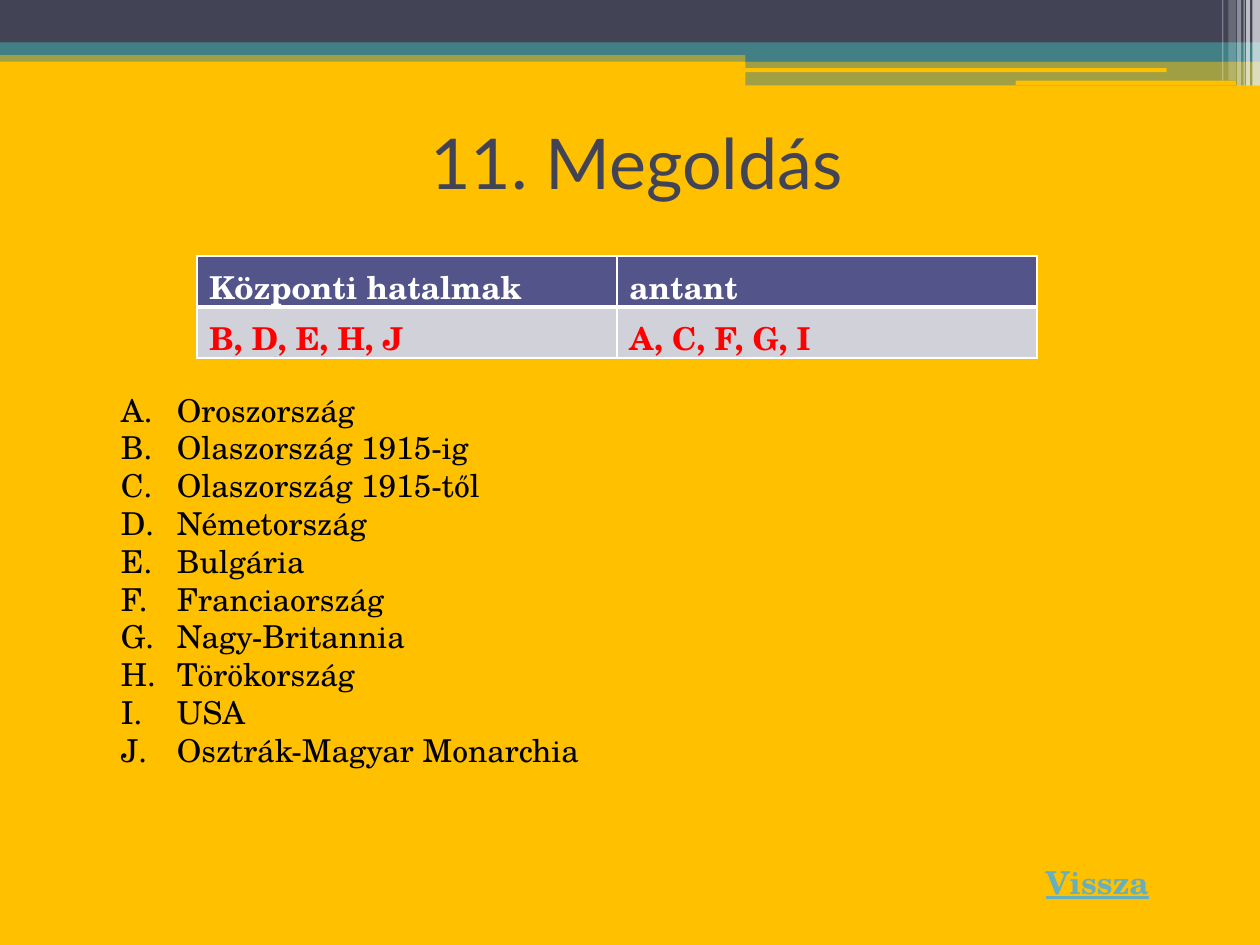
from pptx import Presentation
from pptx.dml.color import RGBColor
from pptx.enum.shapes import MSO_SHAPE
from pptx.enum.text import MSO_ANCHOR, MSO_AUTO_SIZE, PP_ALIGN
from pptx.oxml.ns import qn
from pptx.util import Pt
from lxml import etree

RECT, ROUND = MSO_SHAPE.RECTANGLE, MSO_SHAPE.ROUNDED_RECTANGLE
MIDDLE, TOP = MSO_ANCHOR.MIDDLE, MSO_ANCHOR.TOP
CENTER, LEFT = PP_ALIGN.CENTER, PP_ALIGN.LEFT
NO_FIT = MSO_AUTO_SIZE.NONE

SERIF = "TeX Gyre Schola"
GOLD, NAVY, TEAL, WHITE = "FFC000", "424456", "438086", "FFFFFF"

BANDS = [
    (RECT, 0, 28.8, 720, 6.48, TEAL, 50),
    (RECT, 0, 0, 720, 24.5, NAVY, 100),
    (RECT, 0, 24.2, 720, 7.2, TEAL, 100),
    (RECT, 426, 28.2, 294, 7, TEAL, 100),
    (RECT, 426, 34.8, 294, 14, TEAL, 50),
    (ROUND, 425.5, 39, 241.2, 2.2, GOLD, 100),
    (ROUND, 580.3, 46.1, 126, 2.6, GOLD, 100),
]
STRIPES = [
    (715.7, 4.3, 49, 65),
    (712.1, 2.2, 49, 65),
    (710.6, 0.7, 49, 60),
    (707, 2.2, 49, 40),
    (702, 4.3, 46, 20),
    (698.4, 0.7, 46, 30),
]
GRID = [
    (["Központi hatalmak", "antant"], "53548A", WHITE, 3),
    (["B, D, E, H, J", "A, C, F, G, I"], "D1D1DA", "FF0000", 1),
]
LANDS = [
    "Oroszország", "Olaszország 1915-ig", "Olaszország 1915-től",
    "Németország", "Bulgária", "Franciaország", "Nagy-Britannia",
    "Törökország", "USA", "Osztrák-Magyar Monarchia",
]


def paint(part, color):
    """Give a fill or a font a solid colour."""
    if hasattr(part, "solid"):
        part.solid()
        part.fore_color.rgb = RGBColor.from_string(color)
    else:
        part.color.rgb = RGBColor.from_string(color)


def style(font, color, **form):
    """Apply a colour and a dict of format values to a font."""
    for key, value in {"name": SERIF, "size": Pt(18), **form}.items():
        setattr(font, key, value)
    paint(font, color)


def place(shape, box):
    """Move a shape to a box given in points."""
    for key, value in zip(("left", "top", "width", "height"), box):
        setattr(shape, key, Pt(value))


def add_band(slide, kind, box, color, alpha):
    """Draw one flat bar with the given opacity in percent."""
    bar = slide.shapes.add_shape(kind, *map(Pt, box))
    bar.shadow.inherit = False
    bar.line.fill.background()
    paint(bar.fill, color)
    if alpha < 100:
        tint = bar.fill._xPr.find(".//" + qn("a:srgbClr"))
        etree.SubElement(tint, qn("a:alpha"), val=str(alpha * 1000))


def add_header(slide):
    """Draw the bands and stripes along the top edge."""
    for kind, x, y, w, h, color, alpha in BANDS:
        add_band(slide, kind, (x, y, w, h), color, alpha)
    for x, w, h, alpha in STRIPES:
        add_band(slide, RECT, (x, 0, w, h), WHITE, alpha)


def set_title(slide, box):
    """Fill the title placeholder."""
    title = slide.shapes.title
    place(title, box)
    frame = title.text_frame
    frame.text = "11. Megoldás"
    frame.vertical_anchor = MIDDLE
    frame.paragraphs[0].alignment = CENTER
    style(frame.paragraphs[0].font, NAVY, name="Lato", size=Pt(40))


def set_edges(cell, base):
    """Draw white cell borders with a chosen bottom width."""
    props = cell._tc.get_or_add_tcPr()
    for side, width in zip("LRTB", (1, 1, 1, base)):
        line = etree.SubElement(props, qn("a:ln" + side), w=str(Pt(width)))
        fill = etree.SubElement(line, qn("a:solidFill"))
        etree.SubElement(fill, qn("a:srgbClr"), val=WHITE)


def add_grid(slide, box):
    """Add the table of the two alliances."""
    table = slide.shapes.add_table(len(GRID), 2, *map(Pt, box)).table
    for row, (texts, back, color, base) in zip(table.rows, GRID):
        for cell, text in zip(row.cells, texts):
            cell.text = text
            set_edges(cell, base)
            paint(cell.fill, back)
            style(cell.text_frame.paragraphs[0].font, color, bold=True)
    for col in (0, 1):
        table.cell(1, col)._tc.tcPr.find(qn("a:lnT")).set("w", str(Pt(3)))


def set_list(slide, box):
    """Fill the body placeholder with the lettered countries."""
    body = slide.placeholders[1]
    place(body, box)
    frame = body.text_frame
    frame.text = "\n".join(LANDS)
    frame.auto_size = NO_FIT
    frame.vertical_anchor = TOP
    for para in frame.paragraphs:
        props = para._p.get_or_add_pPr()
        props.set("marL", str(Pt(32)))
        props.set("indent", str(Pt(-32)))
        etree.SubElement(props, qn("a:buFont"), typeface="+mj-lt")
        etree.SubElement(props, qn("a:buAutoNum"), type="alphaUcPeriod")
        para.alignment = LEFT
        para.space_before = Pt(0)
        style(para.font, "000000")


def add_back(slide, box):
    """Add the underlined label at the bottom right."""
    frame = slide.shapes.add_textbox(*map(Pt, box)).text_frame
    frame.word_wrap = False
    frame.text = "Vissza"
    font = frame.paragraphs[0].runs[0].font
    style(font, "67AFBD", bold=True, underline=True)


def main():
    """Build the slide and save it."""
    deck = Presentation()
    deck.slide_width, deck.slide_height = Pt(720), Pt(540)
    slide = deck.slides.add_slide(deck.slide_layouts[1])
    paint(slide.background.fill, GOLD)
    add_header(slide)
    set_title(slide, (39.6, 50.4, 648, 84))
    add_back(slide, (590.4, 489.6, 74.2, 28.8))
    add_grid(slide, (112.5, 146.3, 480, 58.4))
    set_list(slide, (61.9, 219.6, 613.4, 225.4))
    deck.save("out.pptx")


if __name__ == "__main__":
    main()
